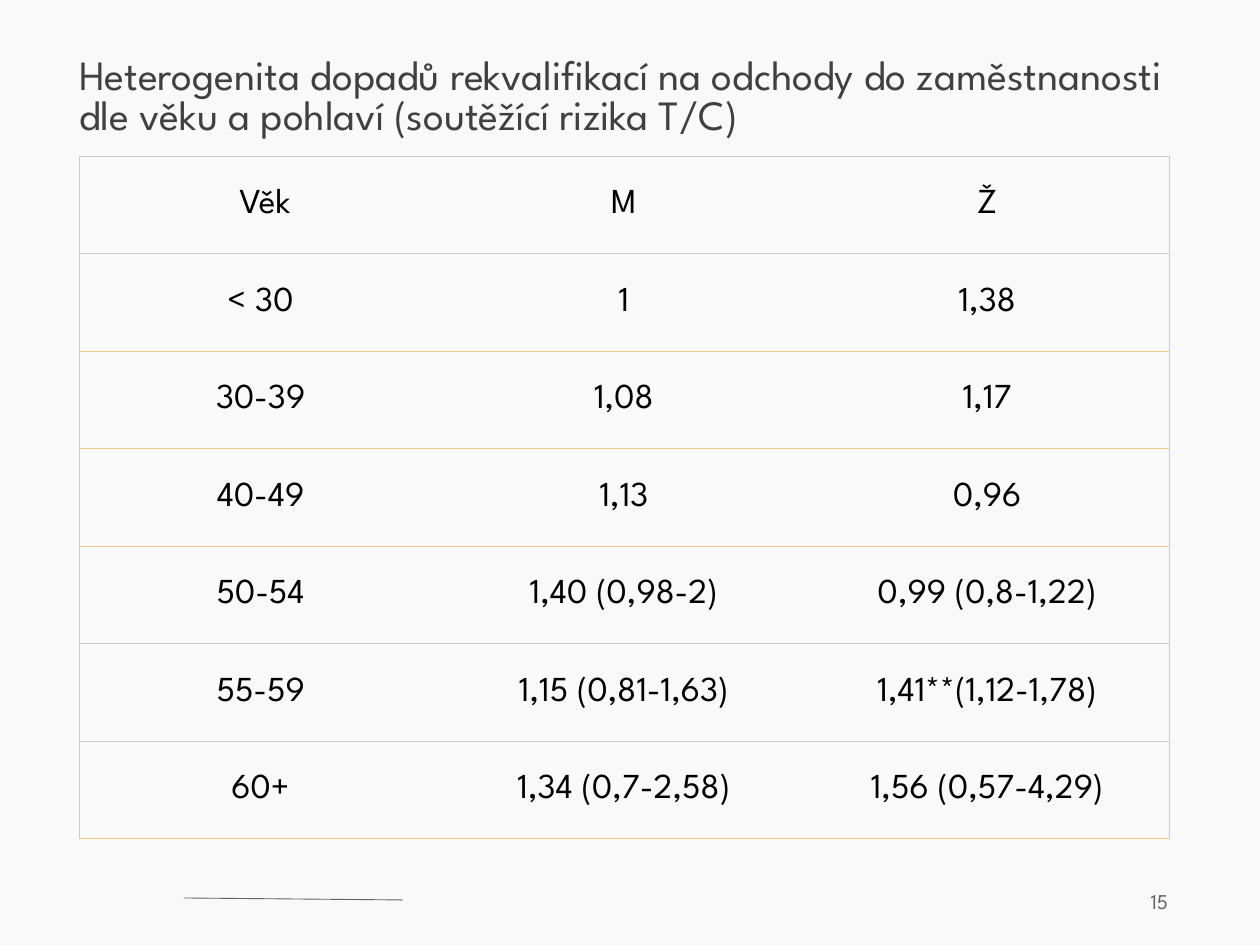
from dataclasses import dataclass

from lxml import etree
from pptx import Presentation
from pptx.dml.color import RGBColor
from pptx.enum.shapes import MSO_CONNECTOR
from pptx.enum.text import MSO_ANCHOR, PP_ALIGN
from pptx.oxml.ns import qn
from pptx.slide import Slide
from pptx.table import _Cell
from pptx.util import Emu, Pt

STRAIGHT = MSO_CONNECTOR.STRAIGHT
TOP, MIDDLE = MSO_ANCHOR.TOP, MSO_ANCHOR.MIDDLE
LEFT, CENTER, RIGHT = PP_ALIGN.LEFT, PP_ALIGN.CENTER, PP_ALIGN.RIGHT
EMU_PER_PX = 914400 / 126
FONT = "League Spartan"
COLORS = {
    "background": "F9F9F9",
    "title": "404040",
    "muted": "636363",
    "text": "000000",
    "grey": "CCCCCC",
    "gold": "F0CA81",
}
TABLE_BOX = (79, 156, 1090, 683)
ROWS = (
    (" Věk", "M", "Ž"),
    ("< 30", "1", "1,38"),
    ("30-39", "1,08", "1,17"),
    ("40-49", "1,13", "0,96"),
    ("50-54", "1,40 (0,98-2)", "0,99 (0,8-1,22)"),
    ("55-59", "1,15 (0,81-1,63)", "1,41**(1,12-1,78)"),
    ("60+", "1,34 (0,7-2,58)", "1,56 (0,57-4,29)"),
)
ROW_LINES = ("grey", "grey", "gold", "gold", "gold", "grey", "grey", "gold")
COLUMN_LINES = ("grey", None, None, "grey")


@dataclass(frozen=True)
class Label:
    text: str
    box: tuple[int, int, int, int]
    size: float
    color: str
    align: PP_ALIGN
    anchor: MSO_ANCHOR
    margin: int
    line_spacing: float


LABELS = (
    Label("15", (897, 876, 284, 50), 12, "muted", RIGHT, MIDDLE, 13, 1.0),
    Label(
        "Heterogenita dopadů rekvalifikací na odchody do zaměstnanosti "
        "dle věku a pohlaví (soutěžící rizika T/C)",
        (79, 59, 1090, 97), 23.8, "title", LEFT, TOP, 0, 0.8,
    ),
)


def px(length: int) -> Emu:
    return Emu(round(length * EMU_PER_PX))


def rgb(name: str) -> RGBColor:
    return RGBColor.from_string(COLORS[name])


def set_values(target: object, values: dict[str, object]) -> None:
    for name, value in values.items():
        setattr(target, name, value)


def style_paragraph(paragraph, size: float, color: str, align: PP_ALIGN) -> None:
    paragraph.alignment = align
    set_values(paragraph.runs[0].font, {"name": FONT, "size": Pt(size)})
    paragraph.runs[0].font.color.rgb = rgb(color)


def add_label(slide: Slide, label: Label) -> None:
    frame = slide.shapes.add_textbox(*map(px, label.box)).text_frame
    margin = px(label.margin)
    set_values(frame, {
        "word_wrap": True, "vertical_anchor": label.anchor, "text": label.text,
        "margin_left": margin, "margin_right": margin,
        "margin_top": 0, "margin_bottom": 0,
    })
    paragraph = frame.paragraphs[0]
    paragraph.line_spacing = label.line_spacing
    style_paragraph(paragraph, label.size, label.color, label.align)


def set_borders(cell: _Cell, borders: dict[str, str | None]) -> None:
    properties = cell._tc.get_or_add_tcPr()
    for index, (side, color) in enumerate(borders.items()):
        line = etree.Element(qn(f"a:{side}"), w=str(Pt(0.5)))
        if color is None:
            etree.SubElement(line, qn("a:noFill"))
        else:
            fill = etree.SubElement(line, qn("a:solidFill"))
            etree.SubElement(fill, qn("a:srgbClr"), val=COLORS[color])
        properties.insert(index, line)


def add_results_table(slide: Slide) -> None:
    table = slide.shapes.add_table(len(ROWS), len(ROWS[0]), *map(px, TABLE_BOX)).table
    set_values(table, {"first_row": False, "horz_banding": False})
    for row, values in enumerate(ROWS):
        for column, value in enumerate(values):
            cell = table.cell(row, column)
            set_values(cell, {
                "text": value, "vertical_anchor": MIDDLE,
                "margin_left": px(1), "margin_right": px(1),
                "margin_top": px(1), "margin_bottom": 0,
            })
            cell.fill.background()
            style_paragraph(cell.text_frame.paragraphs[0], 20, "text", CENTER)
            set_borders(cell, {
                "lnL": COLUMN_LINES[column], "lnR": COLUMN_LINES[column + 1],
                "lnT": ROW_LINES[row], "lnB": ROW_LINES[row + 1],
            })


def add_footer_line(slide: Slide) -> None:
    connector = slide.shapes.add_connector(STRAIGHT, *map(px, (184, 898, 403, 900)))
    connector.line.color.rgb = rgb("muted")
    connector.line.width = Pt(0.5)
    etree.SubElement(connector._element.spPr, qn("a:effectLst"))


def main() -> None:
    """Build the slide on retraining effects by age and sex."""
    presentation = Presentation()
    set_values(presentation, {"slide_width": px(1260), "slide_height": px(945)})
    slide = presentation.slides.add_slide(presentation.slide_layouts[6])
    slide.background.fill.solid()
    slide.background.fill.fore_color.rgb = rgb("background")
    add_footer_line(slide)
    for label in LABELS:
        add_label(slide, label)
    add_results_table(slide)
    presentation.save("out.pptx")


if __name__ == "__main__":
    main()
